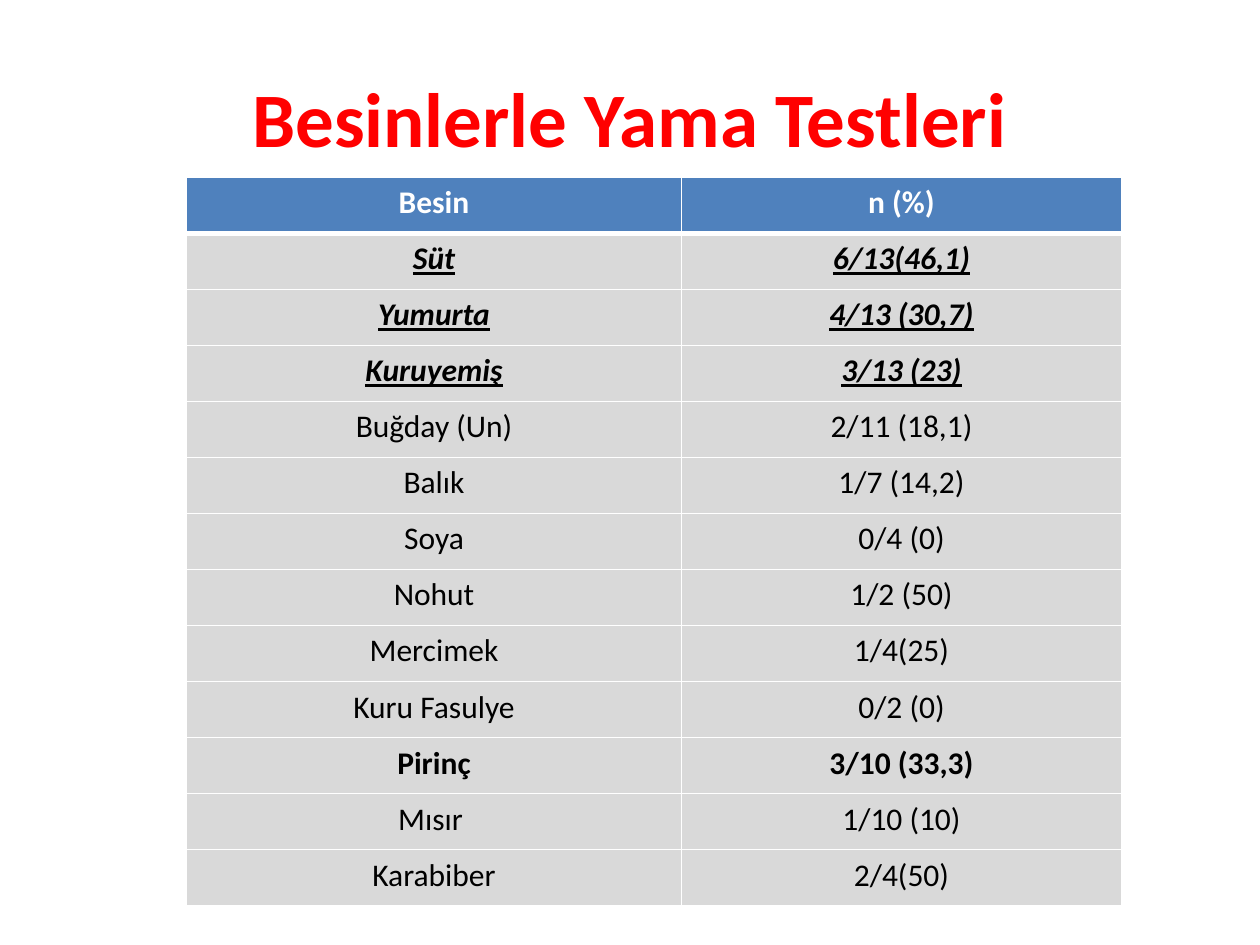
from lxml.etree import SubElement
from pptx import Presentation
from pptx.dml.color import RGBColor
from pptx.enum.text import MSO_ANCHOR, PP_ALIGN
from pptx.oxml.ns import qn
from pptx.util import Pt

RED = RGBColor(0xFF, 0x00, 0x00)
BLUE = RGBColor(0x4F, 0x81, 0xBD)
GREY = RGBColor(0xD9, 0xD9, 0xD9)
WHITE = RGBColor(0xFF, 0xFF, 0xFF)
BLACK = RGBColor(0x00, 0x00, 0x00)
FONT = "Calibri"

FOODS = [
    ("Besin", "n (%)"),
    ("Süt", "6/13(46,1)"),
    ("Yumurta", "4/13 (30,7)"),
    ("Kuruyemiş", "3/13 (23)"),
    ("Buğday (Un)", "2/11 (18,1)"),
    ("Balık", "1/7 (14,2)"),
    ("Soya", "0/4 (0)"),
    ("Nohut", "1/2 (50)"),
    ("Mercimek", "1/4(25)"),
    ("Kuru Fasulye", "0/2 (0)"),
    ("Pirinç", "3/10 (33,3)"),
    ("Mısır ", "1/10 (10)"),
    ("Karabiber", "2/4(50)"),
]
EMPHASIZED = ("Süt", "Yumurta", "Kuruyemiş")
BOLD = ("Besin", "Pirinç", *EMPHASIZED)
COLUMN_WIDTHS = (282.96, 251.28)
TABLE_HEIGHT = 416.16


def write(text_frame, text, size, color, bold):
    text_frame.text = text
    paragraph = text_frame.paragraphs[0]
    paragraph.alignment = PP_ALIGN.CENTER
    font = paragraph.runs[0].font
    font.name = FONT
    font.size = Pt(size)
    font.color.rgb = color
    font.bold = bold
    return font


def add_border(cell, side, width):
    properties = cell._tc.get_or_add_tcPr()
    line = SubElement(properties, qn(f"a:ln{side}"), w=str(Pt(width)))
    fill = SubElement(line, qn("a:solidFill"))
    SubElement(fill, qn("a:srgbClr"), val=str(WHITE))


presentation = Presentation()
presentation.slide_width = Pt(720)
presentation.slide_height = Pt(540)
slide = presentation.slides.add_slide(presentation.slide_layouts[5])

# Title
title = slide.shapes.title
title.left, title.top, title.width, title.height = Pt(36), Pt(21.6), Pt(648), Pt(90)
title.text_frame.vertical_anchor = MSO_ANCHOR.MIDDLE
write(title.text_frame, "Besinlerle Yama Testleri", 44, RED, True)

# Table of patch test results
table = slide.shapes.add_table(
    len(FOODS), len(COLUMN_WIDTHS), Pt(106.56), Pt(101.52),
    Pt(sum(COLUMN_WIDTHS)), Pt(TABLE_HEIGHT),
).table
for column, width in zip(table.columns, COLUMN_WIDTHS):
    column.width = Pt(width)

for row_index, food in enumerate(FOODS):
    is_header = row_index == 0
    is_emphasized = food[0] in EMPHASIZED
    for column_index, text in enumerate(food):
        cell = table.cell(row_index, column_index)
        font = write(cell.text_frame, text, 18,
                     WHITE if is_header else BLACK, food[0] in BOLD)
        font.italic = is_emphasized
        font.underline = is_emphasized

        # Borders come before the fill in the cell properties
        add_border(cell, "L", 1)
        add_border(cell, "R", 1)
        add_border(cell, "T", 3 if row_index == 1 else 1)
        add_border(cell, "B", 3 if is_header else 1)
        cell.fill.solid()
        cell.fill.fore_color.rgb = BLUE if is_header else GREY

presentation.save("out.pptx")
